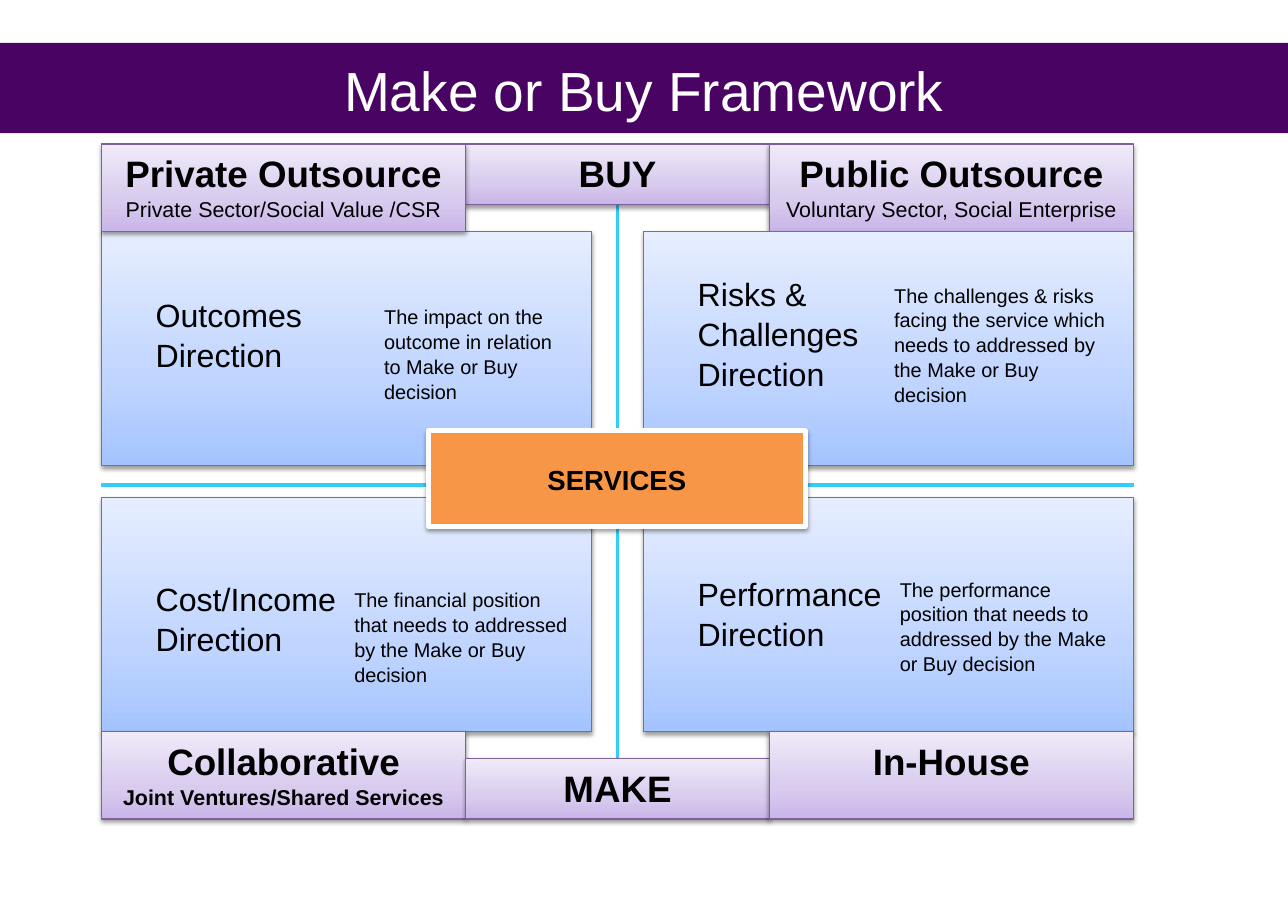
from copy import deepcopy

from lxml import etree
from pptx import Presentation
from pptx.dml.color import RGBColor
from pptx.enum import shapes, text
from pptx.oxml import ns
from pptx.util import Cm, Pt

BLACK = RGBColor(0x00, 0x00, 0x00)
WHITE = RGBColor(0xFF, 0xFF, 0xFF)
PURPLE = RGBColor(0x48, 0x03, 0x63)
ORANGE = RGBColor(0xF7, 0x96, 0x46)
CYAN = RGBColor(0x33, 0xCC, 0xFF)
BLUE_EDGE = RGBColor(0x4B, 0x7E, 0xBC)
LILAC_EDGE = RGBColor(0x7D, 0x60, 0xA0)
BLUES = [RGBColor(0xA4, 0xC4, 0xFF), RGBColor(0xBF, 0xD4, 0xFF), RGBColor(0xE6, 0xEE, 0xFF)]
LILACS = [RGBColor(0xC9, 0xB5, 0xE8), RGBColor(0xD8, 0xCB, 0xEE), RGBColor(0xF0, 0xEA, 0xF9)]
STOPS = [0, 0.35, 1]

WIDTH, HEIGHT = 29.7, 21
LEFT, RIGHT = 2.34, 26.14
PANEL_W, PANEL_H = 11.3, 5.4
PANEL_X2 = RIGHT - PANEL_W
PANEL_Y1, PANEL_Y2 = 5.33, 11.47
TAG_W, TAG_H, AXIS_H = 8.4, 2.01, 1.4
TAG_X2 = RIGHT - TAG_W
TAG_Y1, TAG_Y2 = PANEL_Y1 - TAG_H, PANEL_Y2 + PANEL_H
AXIS_X, AXIS_W = LEFT + TAG_W, TAG_X2 - LEFT - TAG_W
AXIS_Y2 = TAG_Y2 + TAG_H - AXIS_H


class Board:
    font = "Arial"
    spacing = 1.04

    def __init__(self, slide):
        self.s = slide

    def line(self, x1, y1, x2, y2):
        ln = self.s.shapes.add_connector(
            shapes.MSO_CONNECTOR.STRAIGHT, Cm(x1), Cm(y1), Cm(x2), Cm(y2))
        ln.line.color.rgb = CYAN
        ln.line.width = Pt(2.25)
        etree.SubElement(ln._element.spPr, ns.qn("a:effectLst"))
        return ln

    def label(self, sp, lines, color=BLACK, align=text.PP_ALIGN.CENTER,
              anchor=text.MSO_ANCHOR.MIDDLE):
        """Fill a shape with (wording, size, bold) paragraphs."""
        tf = sp.text_frame
        tf.word_wrap = True
        tf.vertical_anchor = anchor
        for i, (wording, size, bold) in enumerate(lines):
            p = tf.add_paragraph() if i else tf.paragraphs[0]
            p.text = wording
            p.alignment = align
            p.line_spacing = self.spacing
            p.font.name = self.font
            p.font.size = Pt(size)
            p.font.bold = bold
            p.font.color.rgb = color

    def box(self, x, y, w, h, fill, edge=None, edge_pt=0.75):
        """Rectangle; a list of colours as fill gives a gradient from bottom to top."""
        sp = self.s.shapes.add_shape(
            shapes.MSO_SHAPE.RECTANGLE, Cm(x), Cm(y), Cm(w), Cm(h))
        sp.shadow.inherit = False
        if isinstance(fill, list):
            self.gradient(sp, fill)
        else:
            sp.fill.solid()
            sp.fill.fore_color.rgb = fill
        if edge is None:
            sp.line.fill.background()
        else:
            sp.line.color.rgb = edge
            sp.line.width = Pt(edge_pt)
            self.shade(sp)
        return sp

    def gradient(self, sp, colors):
        sp.fill.gradient()
        sp.fill.gradient_angle = 90
        first = sp._element.spPr.find(".//" + ns.qn("a:gs"))
        first.addnext(deepcopy(first))
        for stop, position, color in zip(sp.fill.gradient_stops, STOPS, colors):
            stop.position = position
            stop.color.rgb = color

    def shade(self, sp):
        """Soft black shadow straight below the shape."""
        effects = sp._element.spPr.find(ns.qn("a:effectLst"))
        shadow = etree.SubElement(
            effects, ns.qn("a:outerShdw"), blurRad=str(Pt(3.1)), dist=str(Pt(1.6)),
            dir="5400000", rotWithShape="0")
        color = etree.SubElement(shadow, ns.qn("a:srgbClr"), val=str(BLACK))
        etree.SubElement(color, ns.qn("a:alpha"), val="38000")

    def panel(self, x, y, heading, drop):
        """Blue quadrant with its heading in the left half, drop cm below the top."""
        sp = self.box(x, y, PANEL_W, PANEL_H, BLUES, BLUE_EDGE)
        tf = sp.text_frame
        tf.margin_left, tf.margin_top = Cm(1.25), Cm(drop)
        tf.margin_right = Cm(PANEL_W / 2)
        self.label(sp, [(heading, 21, False)], align=text.PP_ALIGN.LEFT,
                   anchor=text.MSO_ANCHOR.TOP)

    def tag(self, x, y, w, h, title, subtitle=None, bold=False):
        sp = self.box(x, y, w, h, LILACS, LILAC_EDGE)
        lines = [(title, 24, True)]
        if subtitle:
            lines.append((subtitle, 14, bold))
        self.label(sp, lines, anchor=text.MSO_ANCHOR.TOP)
        return sp

    def note(self, x, y, w, h, wording):
        sp = self.s.shapes.add_textbox(Cm(x), Cm(y), Cm(w), Cm(h))
        self.label(sp, [(wording, 13, False)], align=text.PP_ALIGN.LEFT,
                   anchor=text.MSO_ANCHOR.TOP)


def main():
    prs = Presentation()
    prs.slide_width, prs.slide_height = Cm(WIDTH), Cm(HEIGHT)
    b = Board(prs.slides.add_slide(prs.slide_layouts[6]))

    b.line(LEFT, 11.18, RIGHT, 11.18)
    axis_x = AXIS_X + AXIS_W / 2
    axis = b.line(axis_x, TAG_Y1 + AXIS_H, axis_x, AXIS_Y2)

    b.panel(LEFT, PANEL_Y1, "Outcomes Direction", 1.45)
    buy = b.tag(AXIS_X, TAG_Y1, AXIS_W, AXIS_H, "BUY")
    b.tag(LEFT, TAG_Y1, TAG_W, TAG_H, "Private Outsource", "Private Sector/Social Value /CSR")
    b.tag(TAG_X2, TAG_Y1, TAG_W, TAG_H, "Public Outsource", "Voluntary Sector, Social Enterprise")
    b.panel(PANEL_X2, PANEL_Y1, "Risks & Challenges Direction", 0.96)
    b.panel(LEFT, PANEL_Y2, "Cost/Income Direction", 1.84)
    b.panel(PANEL_X2, PANEL_Y2, "Performance Direction", 1.73)
    b.tag(LEFT, TAG_Y2, TAG_W, TAG_H, "Collaborative", "Joint Ventures/Shared Services", True)
    make = b.tag(AXIS_X, AXIS_Y2, AXIS_W, AXIS_H, "MAKE")
    b.tag(TAG_X2, TAG_Y2, TAG_W, TAG_H, "In-House")
    axis.begin_connect(buy, 2)
    axis.end_connect(make, 0)

    b.note(8.61, 6.88, 4.8, 2.49,
           "The impact on the outcome in relation to Make or Buy decision")
    services = b.box(9.88, 9.93, 8.69, 2.21, ORANGE, WHITE, 3)
    b.label(services, [("SERVICES", 18, True)])
    b.note(20.37, 6.38, 5.59, 3.02,
           "The challenges & risks facing the service which needs to addressed "
           "by the Make or Buy decision")
    b.note(7.92, 13.41, 5.59, 2.49,
           "The financial position that needs to addressed by the Make or Buy decision")
    b.note(20.5, 13.16, 5.59, 2.49,
           "The performance position that needs to addressed by the Make or Buy decision")

    banner = b.box(0, 0.99, WIDTH, 2.08, PURPLE)
    b.label(banner, [("Make or Buy Framework", 36, False)], WHITE)

    prs.save("out.pptx")


if __name__ == "__main__":
    main()
